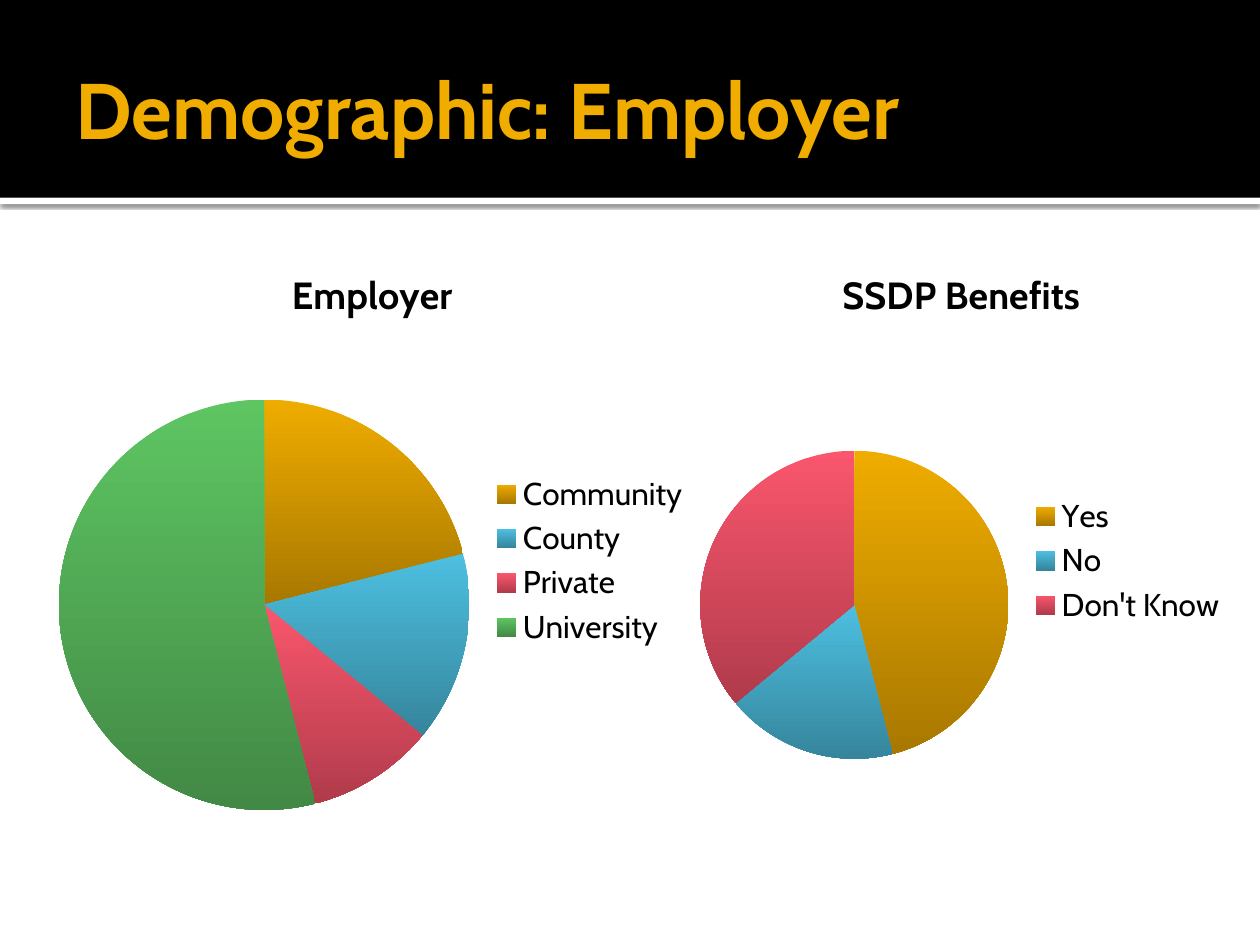
from dataclasses import dataclass

import lxml.etree
import pptx
import pptx.chart.data
import pptx.dml.color
import pptx.enum.chart
import pptx.enum.shapes
import pptx.enum.text
import pptx.oxml
import pptx.util
from pptx.util import Inches

FONT = "Cabin"
GOLD = "F0AD00"
BLACK = "000000"
WHITE = "FFFFFF"
# Top and bottom colour of each slice, in category order
SLICE_GRADIENTS = [
    ("EFAC00", "A87800"),
    ("4DBFE0", "35859C"),
    ("FA566D", "B03B4B"),
    ("5EC562", "428945"),
]


@dataclass
class Band:
    top: float
    height: float
    color: str
    has_shadow: bool = False


@dataclass
class Pie:
    title: str
    left: float
    width: float
    shares: dict[str, int]


BANDS = [Band(1.57, 0.05, WHITE, has_shadow=True), Band(0, 1.57, BLACK)]
PIES = [
    Pie("Employer", 0.33, 5.25,
        {"Community": 21, "County": 15, "Private": 10, "University": 54}),
    Pie("SSDP Benefits", 5.42, 4.42, {"Yes": 46, "No": 18, "Don't Know": 36}),
]


def rgb(color: str) -> pptx.dml.color.RGBColor:
    return pptx.dml.color.RGBColor.from_string(color)


def format_font(font, size: float, color: str, bold: bool = False) -> None:
    font.name = FONT
    font.size = pptx.util.Pt(size)
    font.bold = bold
    font.color.rgb = rgb(color)


def write_text(frame, text: str, *, size: float, color: str, bold: bool = False,
               align=pptx.enum.text.PP_ALIGN.LEFT) -> None:
    paragraph = frame.paragraphs[0]
    paragraph.alignment = align
    span = paragraph.add_run()
    span.text = text
    format_font(span.font, size, color, bold)


def add_soft_shadow(shape) -> None:
    """Cast a 60 % black shadow straight down."""
    effects = shape.element.spPr.find(pptx.oxml.ns.qn("a:effectLst"))
    effects.append(pptx.oxml.parse_xml(
        f'<a:outerShdw {pptx.oxml.ns.nsdecls("a")} blurRad="31750" dist="10160" '
        'dir="5400000" algn="tl" rotWithShape="0">'
        '<a:srgbClr val="000000"><a:alpha val="60000"/></a:srgbClr></a:outerShdw>'))


def add_band(page, band: Band) -> None:
    shape = page.shapes.add_shape(
        pptx.enum.shapes.MSO_SHAPE.RECTANGLE,
        Inches(0), Inches(band.top), Inches(10), Inches(band.height))
    shape.fill.solid()
    shape.fill.fore_color.rgb = rgb(band.color)
    shape.line.fill.background()
    shape.shadow.inherit = False
    if band.has_shadow:
        add_soft_shadow(shape)


def add_title(page, text: str) -> None:
    title = page.shapes.title
    title.left, title.top = Inches(0.5), Inches(0.17)
    title.width, title.height = Inches(9), Inches(1.37)
    frame = title.text_frame
    frame.word_wrap = True
    frame.vertical_anchor = pptx.enum.text.MSO_ANCHOR.MIDDLE
    frame.margin_left = Inches(0.1)
    frame.margin_right = frame.margin_top = frame.margin_bottom = Inches(0.05)
    write_text(frame, text, size=45, color=GOLD, bold=True)
    # Bring the title in front of the bands
    title.element.getparent().append(title.element)


def add_pie(page, pie: Pie) -> None:
    data = pptx.chart.data.CategoryChartData()
    data.categories = list(pie.shares)
    data.add_series(pie.title, list(pie.shares.values()))
    chart = page.shapes.add_chart(
        pptx.enum.chart.XL_CHART_TYPE.PIE, Inches(pie.left), Inches(1.92),
        Inches(pie.width), Inches(5.06), data).chart
    format_font(chart.font, 18, BLACK)

    chart.has_title = True
    write_text(chart.chart_title.text_frame, pie.title, size=21.6, color=BLACK,
               bold=True, align=pptx.enum.text.PP_ALIGN.CENTER)
    chart.chart_title.include_in_layout = False
    chart.has_legend = True
    chart.legend.position = pptx.enum.chart.XL_LEGEND_POSITION.RIGHT
    chart.legend.include_in_layout = False
    format_font(chart.legend.font, 18, BLACK)

    plot = chart.plots[0]
    plot.vary_by_categories = True
    for index, colors in enumerate(SLICE_GRADIENTS[:len(pie.shares)]):
        slice_format = plot.series[0].points[index].format
        slice_format.line.fill.background()
        slice_format.fill.gradient()
        slice_format.fill.gradient_angle = 270
        for stop, color in zip(slice_format.fill.gradient_stops, colors):
            stop.color.rgb = rgb(color)


def main() -> None:
    deck = pptx.Presentation()
    deck.slide_width, deck.slide_height = Inches(10), Inches(7.5)
    page = deck.slides.add_slide(deck.slide_layouts.get_by_name("Title Only"))
    page.background.fill.solid()
    page.background.fill.fore_color.rgb = rgb(WHITE)
    for band in BANDS:
        add_band(page, band)
    add_title(page, "Demographic: Employer")
    for pie in PIES:
        add_pie(page, pie)
    deck.save("out.pptx")


if __name__ == "__main__":
    main()
